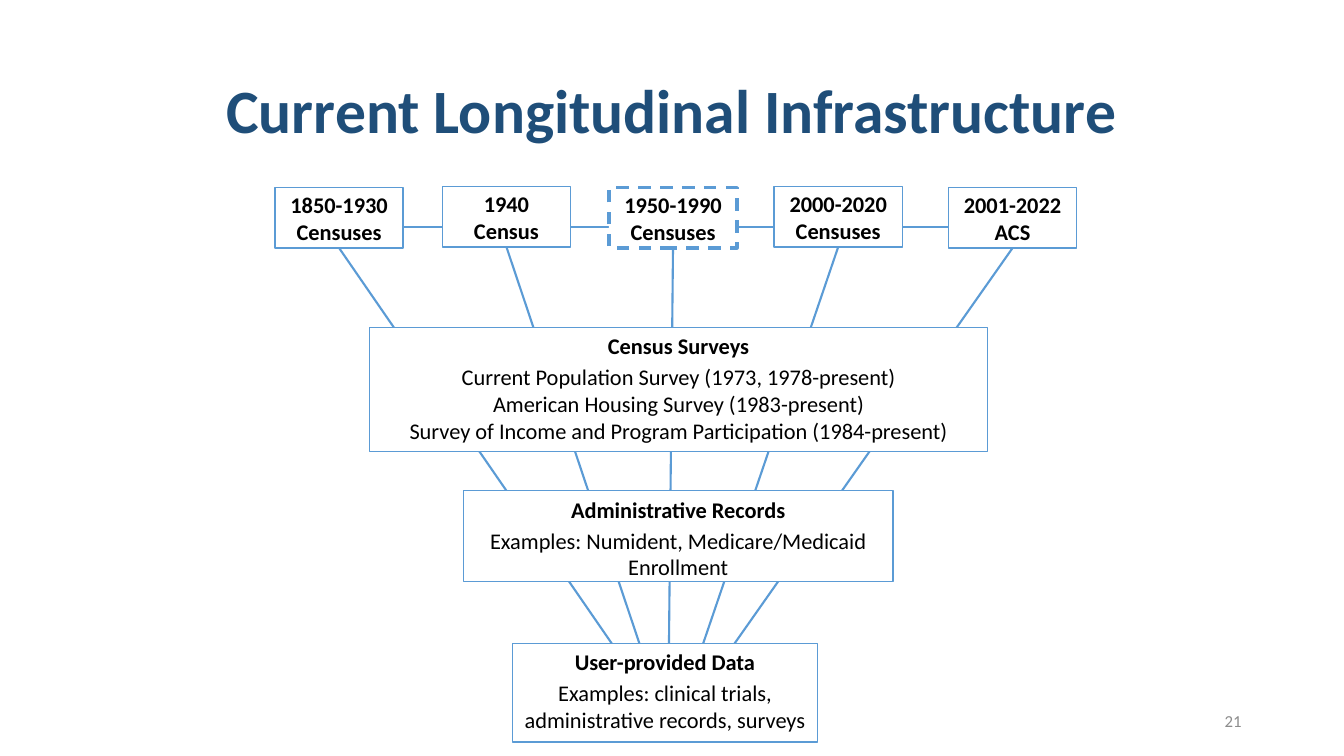
from lxml import etree
from pptx import Presentation
from pptx.dml.color import RGBColor
from pptx.enum import dml, shapes, text
from pptx.oxml import ns
from pptx.util import Pt

BLUE = RGBColor(0x5B, 0x9B, 0xD5)
NAVY = RGBColor(0x1F, 0x4E, 0x79)
BLACK = RGBColor(0, 0, 0)
WHITE = RGBColor(0xFF, 0xFF, 0xFF)
GRAY = RGBColor(0x8C, 0x8C, 0x8C)
FONT = "Calibri"
CENTER = text.PP_ALIGN.CENTER
TOP, MIDDLE = text.MSO_ANCHOR.TOP, text.MSO_ANCHOR.MIDDLE

CENSUS_SIZE = (91.5, 43.2)
CENSUSES = [
    ("1850-1930 Censuses", 196.5, 134, (460, 493), False),
    ("1940 Census", 316, 133.2, (475, 514), False),
    ("1950-1990 Censuses", 435, 134, (477.5, 493), True),
    ("2000-2020 Censuses", 553, 133.2, (486.5, 506), False),
    ("2001-2022 ACS", 677.5, 134, (496, 500.5), False),
]
TIERS = [
    ((264, 234, 441.5, 88.5), "Census Surveys",
     ["Current Population Survey (1973, 1978-present)",
      "American Housing Survey (1983-present)",
      "Survey of Income and Program Participation (1984-present)"]),
    ((331, 350.5, 307, 65), "Administrative Records",
     ["Examples: Numident, Medicare/Medicaid Enrollment"]),
    ((366, 459.5, 218, 70.5), "User-provided Data",
     ["Examples: clinical trials, administrative records, surveys"]),
]


def add_words(paragraph, words, size, color, bold=False, align=CENTER):
    """Add one formatted run to a paragraph."""
    paragraph.alignment = align
    run = paragraph.add_run()
    run.text = words
    run.font.name = FONT
    run.font.size = Pt(size)
    run.font.bold = bold
    run.font.color.rgb = color


def add_link(slide, start, end):
    """Draw a blue line between two points."""
    link = slide.shapes.add_connector(
        shapes.MSO_CONNECTOR.STRAIGHT, *map(Pt, start + end))
    link.line.color.rgb = BLUE
    link.line.width = Pt(1.5)
    etree.SubElement(link._element.spPr, ns.qn("a:effectLst"))
    return link


def add_box(slide, box, anchor, dashed=False):
    """Draw a white outlined box and return it."""
    frame = slide.shapes.add_shape(shapes.MSO_SHAPE.RECTANGLE, *map(Pt, box))
    frame.shadow.inherit = False
    frame.fill.solid()
    frame.fill.fore_color.rgb = WHITE
    frame.line.color.rgb = BLUE
    frame.line.width = Pt(2.25 if dashed else 1)
    if dashed:
        frame.line.dash_style = dml.MSO_LINE.DASH
    frame.text_frame.word_wrap = True
    frame.text_frame.vertical_anchor = anchor
    return frame


def add_title(slide, box, words):
    """Place the title placeholder and fill it."""
    title = slide.shapes.title
    title.left, title.top, title.width, title.height = map(Pt, box)
    title.text_frame.word_wrap = True
    title.text_frame.vertical_anchor = MIDDLE
    heading = title.text_frame.paragraphs[0]
    heading.line_spacing = 0.9
    add_words(heading, words, 44, NAVY, True)


def add_census_row(slide):
    """Draw the row of censuses with its spine and downward links."""
    width, height = CENSUS_SIZE
    links = [add_link(slide, (left + width / 2, top + height), end)
             for _, left, top, end, _ in CENSUSES]
    add_link(slide, (206, 162), (769.5, 162))
    for link, (name, left, top, _, dashed) in zip(links, CENSUSES):
        census = add_box(slide, (left, top, width, height), MIDDLE, dashed)
        add_words(census.text_frame.paragraphs[0], name, 16, BLACK, True)
        link.begin_connect(census, 2)


def add_tier(slide, box, heading, details):
    """Draw one data tier with a bold heading and its details."""
    frame = add_box(slide, box, TOP).text_frame
    frame.paragraphs[0].space_after = Pt(3)
    add_words(frame.paragraphs[0], heading, 16, BLACK, True)
    for detail in details:
        add_words(frame.add_paragraph(), detail, 16, BLACK)


def add_page_number(slide, box, number):
    """Write the page number at the lower right."""
    frame = slide.shapes.add_textbox(*map(Pt, box)).text_frame
    frame.word_wrap = True
    frame.vertical_anchor = MIDDLE
    add_words(frame.paragraphs[0], number, 12, GRAY, align=text.PP_ALIGN.RIGHT)


def main():
    """Build and save the slide."""
    deck = Presentation()
    deck.slide_width, deck.slide_height = Pt(960), Pt(540)
    slide = deck.slides.add_slide(deck.slide_layouts[5])
    add_title(slide, (66, 29, 828, 104.5), "Current Longitudinal Infrastructure")
    add_census_row(slide)
    for tier in TIERS:
        add_tier(slide, *tier)
    add_page_number(slide, (678, 500.5, 216, 28.8), "21")
    deck.save("out.pptx")


if __name__ == "__main__":
    main()
